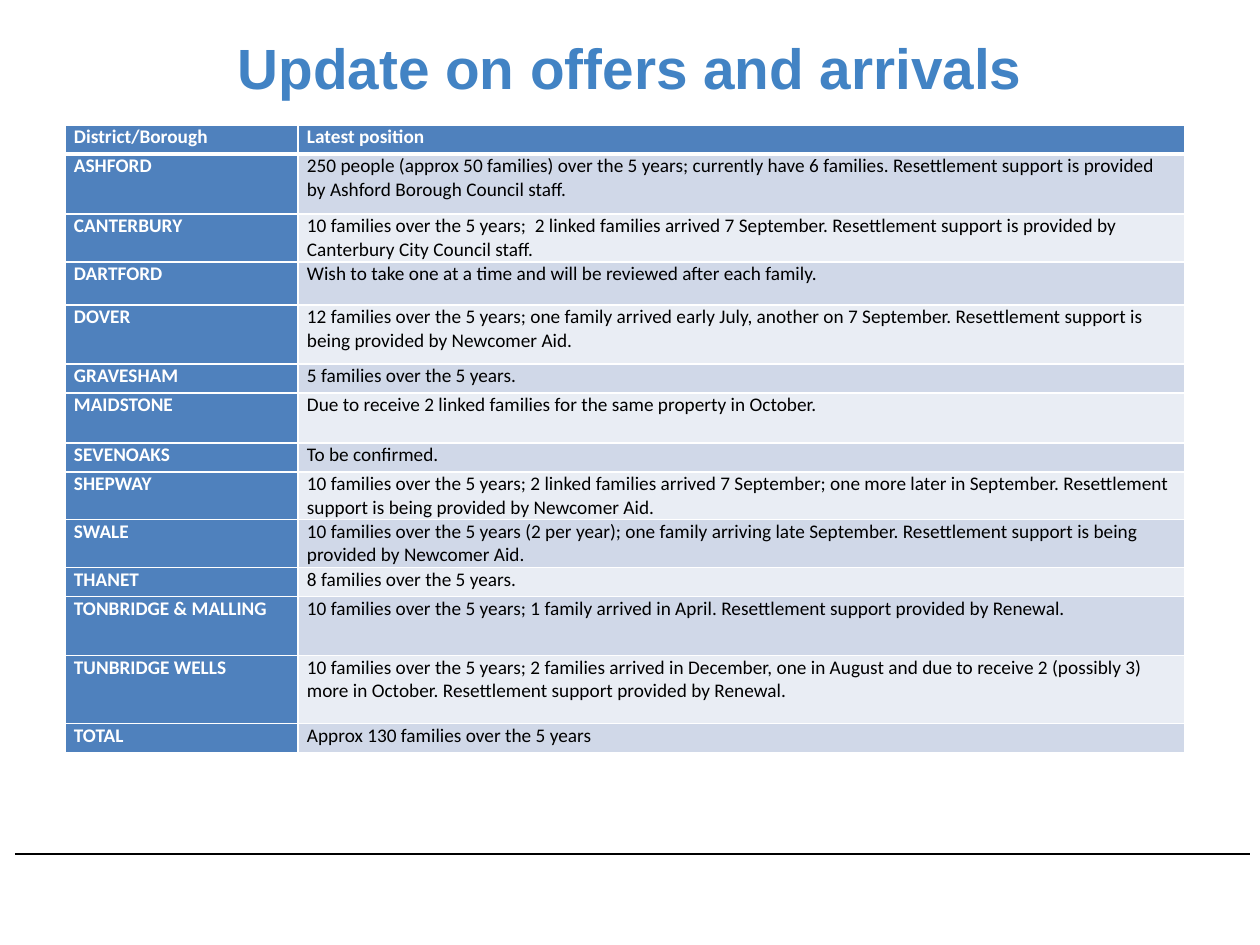
from lxml.etree import SubElement
from pptx import Presentation
from pptx.dml.color import RGBColor
from pptx.enum.shapes import MSO_CONNECTOR
from pptx.enum.text import MSO_ANCHOR, PP_ALIGN
from pptx.oxml import parse_xml
from pptx.oxml.ns import nsdecls, qn
from pptx.util import Pt

SCALE = 914400 / 126
HEADINGS = ("District/Borough", "Latest position")
POSITIONS = [
    ("ASHFORD", 60, "250 people (approx 50 families) over the 5 years; currently have 6 families. "
     "Resettlement support is provided by Ashford Borough Council staff."),
    ("CANTERBURY", 48, "10 families over the 5 years;  2 linked families arrived 7 September. "
     "Resettlement support is provided by Canterbury City Council staff."),
    ("DARTFORD", 43, "Wish to take one at a time and will be reviewed after each family."),
    ("DOVER", 59, "12 families over the 5 years; one family arrived early July, another on 7 September. "
     "Resettlement support is being provided by Newcomer Aid."),
    ("GRAVESHAM", 29, "5 families over the 5 years."),
    ("MAIDSTONE", 50, "Due to receive 2 linked families for the same property in October."),
    ("SEVENOAKS", 29, "To be confirmed."),
    ("SHEPWAY", 48, "10 families over the 5 years; 2 linked families arrived 7 September; "
     "one more later in September. Resettlement support is being provided by Newcomer Aid."),
    ("SWALE", 48, "10 families over the 5 years (2 per year); one family arriving late September. "
     "Resettlement support is being provided by Newcomer Aid."),
    ("THANET", 29, "8 families over the 5 years."),
    ("TONBRIDGE & MALLING", 59, "10 families over the 5 years; 1 family arrived in April. "
     "Resettlement support provided by Renewal."),
    ("TUNBRIDGE WELLS", 68, "10 families over the 5 years; 2 families arrived in December, one in August "
     "and due to receive 2 (possibly 3) more in October. Resettlement support provided by Renewal."),
    ("TOTAL", 29, "Approx 130 families over the 5 years"),
]


def px(length):
    """Turn a length in px into EMU."""
    return round(length * SCALE)


def color(value):
    """Turn a hex string into a colour."""
    return RGBColor.from_string(value)


class SlideBuilder:
    """Hold the style and the current slide."""

    title_font, table_font = "Arial", "Calibri"
    title_color, header_fill = "4283C4", "4F81BD"
    bands = ("D0D8E8", "E9EDF4")
    light, dark = "FFFFFF", "000000"

    def __init__(self, slide):
        """Start building on a slide."""
        self.slide = slide

    def run(self, paragraph, text, font, size, ink, bold):
        """Add one styled run."""
        run = paragraph.add_run()
        run.text = text
        run.font.name, run.font.size, run.font.bold = font, Pt(size), bold
        run.font.color.rgb = color(ink)

    def title(self, text, left, top, width, height):
        """Add the centred heading."""
        frame = self.slide.shapes.add_textbox(*map(px, (left, top, width, height))).text_frame
        frame.word_wrap = True
        frame.vertical_anchor = MSO_ANCHOR.MIDDLE
        paragraph = frame.paragraphs[0]
        paragraph.alignment = PP_ALIGN.CENTER
        self.run(paragraph, text, self.title_font, 32.4, self.title_color, True)

    def rule(self, left, right, y):
        """Add a horizontal line."""
        line = self.slide.shapes.add_connector(
            MSO_CONNECTOR.STRAIGHT, px(left), px(y), px(right), px(y))
        line.line.color.rgb = color(self.dark)
        line.line.width = Pt(1)
        SubElement(line._element.spPr, qn("a:effectLst"))

    def borders(self, cell, top, bottom):
        """Draw the four cell borders, widths in points."""
        properties = cell._tc.get_or_add_tcPr()
        for index, (side, width) in enumerate(zip("LRTB", (1, 1, top, bottom))):
            properties.insert(index, parse_xml(
                f'<a:ln{side} {nsdecls("a")} w="{Pt(width)}"><a:solidFill>'
                f'<a:srgbClr val="{self.light}"/></a:solidFill></a:ln{side}>'))

    def cell(self, cell, text, fill, ink, bold):
        """Fill one table cell."""
        cell.margin_left = cell.margin_right = px(9)
        cell.margin_top = cell.margin_bottom = 0
        cell.fill.solid()
        cell.fill.fore_color.rgb = color(fill)
        self.run(cell.text_frame.paragraphs[0], text, self.table_font, 11, ink, bold)

    def table(self, left, top, widths, header_height, headings, positions):
        """Add the table with a header row, a header column and banded rows."""
        records = [(headings[0], header_height, headings[1]), *positions]
        total_height = sum(height for _, height, _ in records)
        table = self.slide.shapes.add_table(
            len(records), len(widths), px(left), px(top), px(sum(widths)), px(total_height)).table
        for column, width in zip(table.columns, widths):
            column.width = px(width)
        for index, (district, height, position) in enumerate(records):
            table.rows[index].height = px(height)
            is_header = index == 0
            name_cell, position_cell = table.rows[index].cells
            self.cell(name_cell, district, self.header_fill, self.light, True)
            self.cell(position_cell, position,
                      self.header_fill if is_header else self.bands[(index - 1) % 2],
                      self.light if is_header else self.dark, is_header)
            for cell in (name_cell, position_cell):
                self.borders(cell, 3 if index == 1 else 1, 3 if is_header else 1)


def main():
    """Build and save the slide."""
    deck = Presentation()
    deck.slide_width, deck.slide_height = px(1260), px(945)
    builder = SlideBuilder(deck.slides.add_slide(deck.slide_layouts[6]))
    builder.rule(15, 1250, 854)
    builder.title("Update on offers and arrivals", 63, 38, 1134, 58)
    builder.table(65, 125, (233, 887), 29, HEADINGS, POSITIONS)
    deck.save("out.pptx")


if __name__ == "__main__":
    main()
